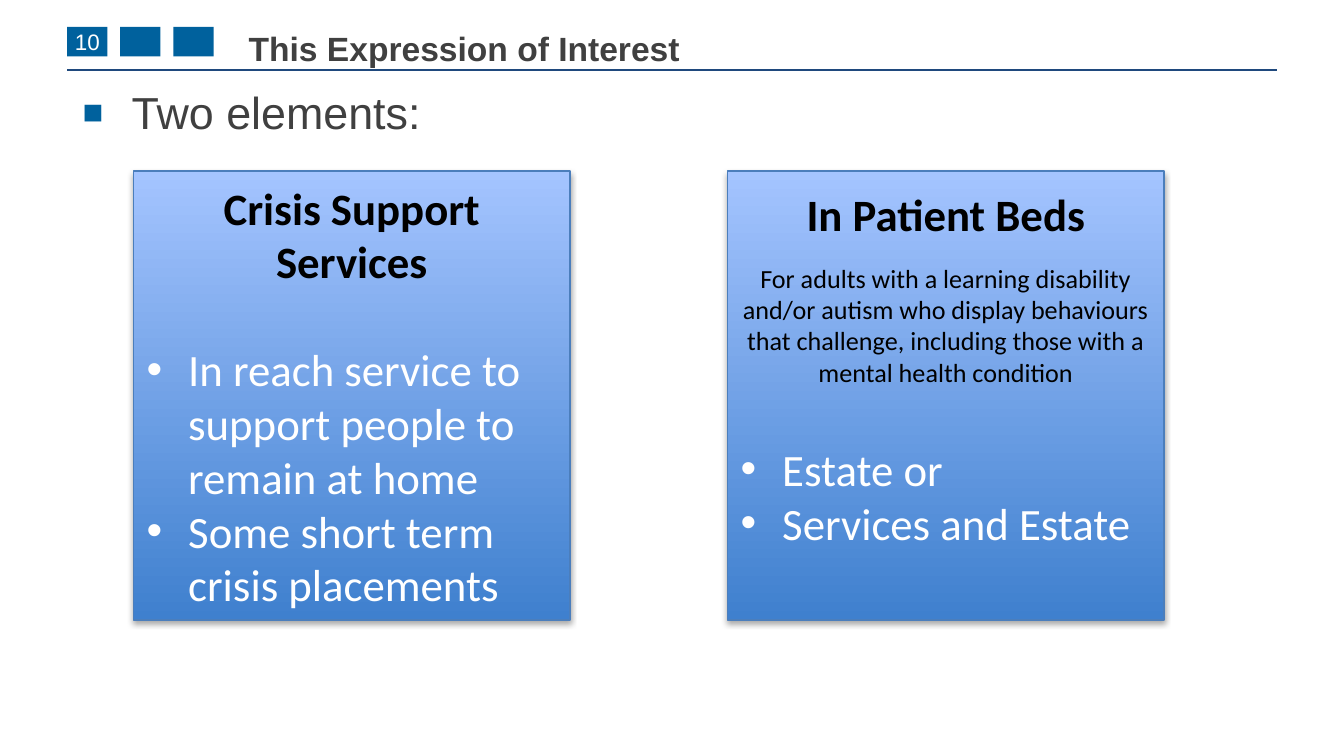
from dataclasses import dataclass

from lxml.etree import SubElement
from pptx import Presentation
from pptx.dml.color import RGBColor
from pptx.enum.shapes import MSO_CONNECTOR, MSO_SHAPE
from pptx.enum.text import MSO_ANCHOR, MSO_AUTO_SIZE, PP_ALIGN
from pptx.oxml.ns import qn
from pptx.util import Inches, Pt


@dataclass(frozen=True)
class Theme:
    """Colours, fonts and type sizes of the slide."""
    blue: str = "00619D"
    navy: str = "1F497D"
    grey: str = "404040"
    black: str = "000000"
    white: str = "FFFFFF"
    edge: str = "4B7EBC"
    deep: str = "3F80CE"
    pale: str = "A4C4FF"
    sans: str = "Arial"
    text: str = "Calibri"
    large: int = 24
    title: int = 18
    note: int = 14
    small: int = 12


THEME = Theme()
LEFT, RIGHT = 5, 95
TAB_STEP = 3.95
CARD_LEFT, CARD_STEP = 9.92, 44.2
CARDS = [
    ("Crisis Support Services", "",
     ["In reach service to support people to remain at home",
      "Some short term crisis placements"], 29, 0.05),
    ("In Patient Beds",
     "For adults with a learning disability and/or autism who display "
     "behaviours that challenge, including those with a mental health condition",
     ["Estate or", "Services and Estate"], 29, 0.46),
]


def grid(*cells):
    """Turn counts of columns and rows into lengths, a hundred columns wide."""
    return [Inches(cell / 10) for cell in cells]


def rgb(code):
    """Read a colour code."""
    return RGBColor.from_string(code)


def style(para, face, size, color, bold=False):
    """Set the font of a whole paragraph."""
    font = para.font
    font.name, font.size, font.bold = face, Pt(size), bold
    font.color.rgb = rgb(color)


def bullet(para, mark, indent, hang, color=None, scale=None):
    """Give a paragraph a hanging bullet."""
    props = para._p.get_or_add_pPr()
    props.set("marL", str(Inches(indent)))
    props.set("indent", str(-Inches(hang)))
    if color:
        SubElement(SubElement(props, qn("a:buClr")), qn("a:srgbClr"), val=color)
    if scale:
        SubElement(props, qn("a:buSzPct"), val=str(scale * 1000))
    SubElement(props, qn("a:buFont"), typeface=THEME.sans)
    SubElement(props, qn("a:buChar"), char=mark)


def holder(shape, words, cells):
    """Move and fill a placeholder, and return its paragraph."""
    shape.left, shape.top, shape.width, shape.height = grid(*cells)
    frame = shape.text_frame
    frame.text = words
    frame.auto_size = MSO_AUTO_SIZE.NONE
    frame.vertical_anchor = MSO_ANCHOR.TOP
    frame.margin_top, frame.margin_bottom = Inches(0.05), 0
    para = frame.paragraphs[0]
    para.alignment = PP_ALIGN.LEFT
    para.space_before = Pt(0)
    return para


def rule(slide):
    """Draw the line under the title."""
    x1, x2, y = grid(LEFT, RIGHT, 5.2)
    line = slide.shapes.add_connector(MSO_CONNECTOR.STRAIGHT, x1, y, x2, y)
    line.line.color.rgb = rgb(THEME.navy)
    line.line.width = Pt(1)
    SubElement(line._element.spPr, qn("a:effectLst"))


def tab(slide, index, words=""):
    """Draw one small square of the header, with a number if given."""
    cells = grid(LEFT + index * TAB_STEP, 2, 3, 2.2)
    box = slide.shapes.add_shape(MSO_SHAPE.RECTANGLE, *cells)
    box.shadow.inherit = False
    box.fill.solid()
    box.fill.fore_color.rgb = rgb(THEME.blue)
    box.line.fill.background()
    if words:
        frame = box.text_frame
        frame.margin_left = frame.margin_right = 0
        frame.margin_top = frame.margin_bottom = 0
        frame.text = words
        frame.paragraphs[0].alignment = PP_ALIGN.CENTER
        style(frame.paragraphs[0], THEME.sans, THEME.small, THEME.white)


def shade(box):
    """Cast a soft shadow below a shape."""
    box.shadow.inherit = False
    effects = box._element.spPr.find(qn("a:effectLst"))
    cast = SubElement(effects, qn("a:outerShdw"), blurRad=str(Pt(3.1)),
                      dist=str(Pt(1.8)), dir="5400000", rotWithShape="0")
    tint = SubElement(cast, qn("a:srgbClr"), val=THEME.black)
    SubElement(tint, qn("a:alpha"), val="35000")


def card(slide, index, head, note, items, gap, base):
    """Draw a card with a heading, an optional note and a list."""
    cells = grid(CARD_LEFT + index * CARD_STEP, 12.73, 32.5, 33.4)
    box = slide.shapes.add_shape(MSO_SHAPE.RECTANGLE, *cells)
    box.fill.gradient()
    box.fill.gradient_angle = 90
    for stop, color in zip(box.fill.gradient_stops, (THEME.deep, THEME.pale)):
        stop.color.rgb = rgb(color)
    box.line.color.rgb = rgb(THEME.edge)
    box.line.width = Pt(0.75)
    shade(box)
    frame = box.text_frame
    frame.word_wrap = True
    frame.vertical_anchor = MSO_ANCHOR.MIDDLE
    frame.margin_bottom = Inches(base)
    para = frame.paragraphs[0]
    para.text = head
    para.alignment = PP_ALIGN.CENTER
    style(para, THEME.text, THEME.large, THEME.black, True)
    if note:
        para = frame.add_paragraph()
        para.text = note
        para.alignment = PP_ALIGN.CENTER
        para.space_before = Pt(11.5)
        style(para, THEME.text, THEME.note, THEME.black)
    for order, item in enumerate(items):
        para = frame.add_paragraph()
        para.text = item
        para.alignment = PP_ALIGN.LEFT
        para.space_before = Pt(0 if order else gap)
        bullet(para, "•", 0.31, 0.31)
        style(para, THEME.text, THEME.large, THEME.white)


def main():
    """Build and save the slide."""
    deck = Presentation()
    deck.slide_width = Inches(10)
    deck.slide_height = Inches(10) * 9 // 16
    slide = deck.slides.add_slide(deck.slide_layouts[1])
    title, body = slide.placeholders
    para = holder(title, "This Expression of Interest", (17.5, 1.6, 76.7, 2.7))
    style(para, THEME.sans, THEME.title, THEME.grey, True)
    para = holder(body, "Two elements:", (LEFT, 5.8, RIGHT - LEFT, 40.7))
    bullet(para, "▪", 0.38, 0.37, THEME.blue, 150)
    style(para, THEME.sans, THEME.large, THEME.grey)
    rule(slide)
    for index, words in enumerate(("10", "", "")):
        tab(slide, index, words)
    for index, content in enumerate(CARDS):
        card(slide, index, *content)
    deck.save("out.pptx")


if __name__ == "__main__":
    main()
